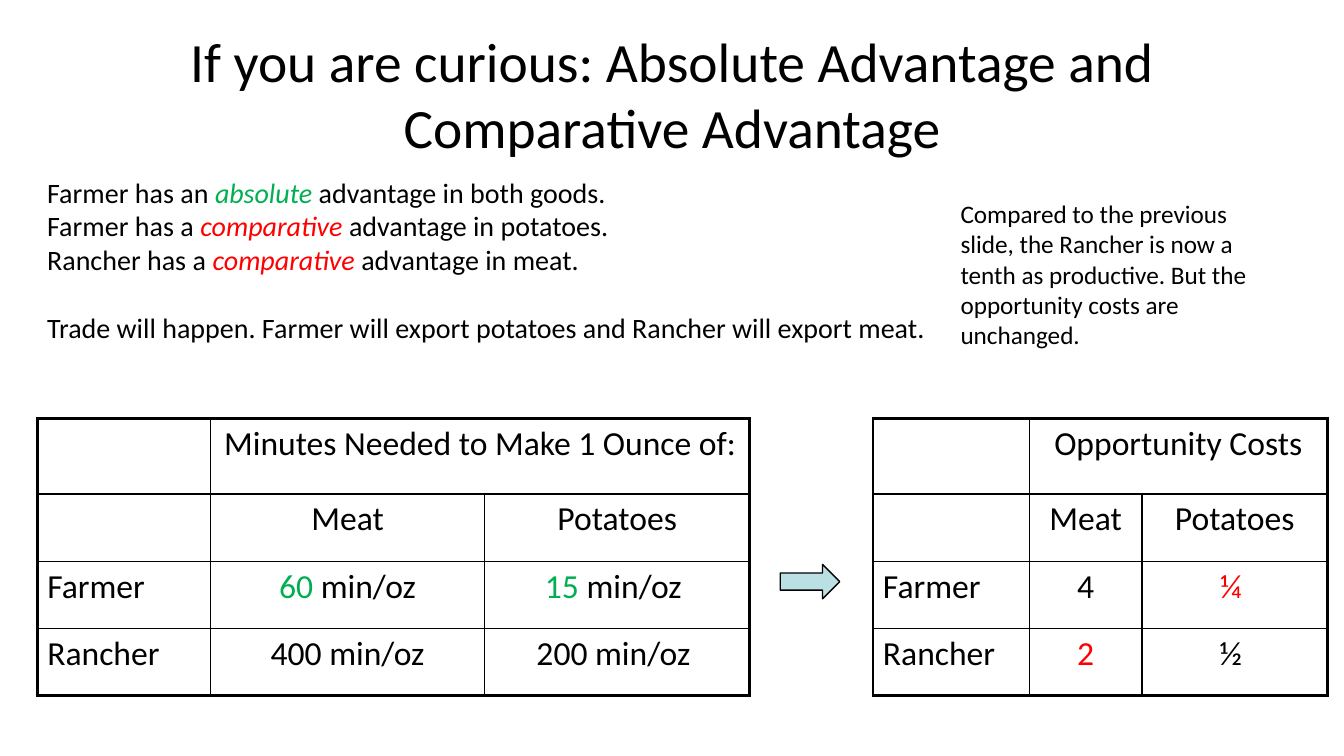
import pptx
import pptx.dml.color
import pptx.enum.shapes
import pptx.enum.text
import pptx.oxml
import pptx.oxml.ns
import pptx.util

Pt = pptx.util.Pt
RGB = pptx.dml.color.RGBColor
ALIGN = pptx.enum.text.PP_ALIGN
ANCHOR = pptx.enum.text.MSO_ANCHOR

COLORS = {"black": "000000", "green": "00B050", "red": "FF0000", "arrow": "BBE0E3"}
OUTER_BORDER, INNER_BORDER = 2.25, 1


def write(paragraph, runs, size, align=ALIGN.LEFT):
    """Fill a paragraph with (text, colour name, italic) runs."""
    paragraph.alignment = align
    for text, color, italic in runs:
        run = paragraph.add_run()
        run.text = text
        formats = {"name": "Calibri", "size": Pt(size), "italic": italic}
        for attribute, value in formats.items():
            setattr(run.font, attribute, value)
        run.font.color.rgb = RGB.from_string(COLORS[color])


def set_borders(cell, widths):
    """Draw black borders; widths are left, right, top, bottom in points."""
    properties = cell._tc.get_or_add_tcPr()
    for position, (side, width) in enumerate(zip("LRTB", widths)):
        properties.insert(position, pptx.oxml.parse_xml(
            f'<a:ln{side} {pptx.oxml.ns.nsdecls("a")} w="{Pt(width)}"><a:solidFill>'
            f'<a:srgbClr val="{COLORS["black"]}"/></a:solidFill></a:ln{side}>'))


presentation = pptx.Presentation()
presentation.slide_width, presentation.slide_height = Pt(960), Pt(540)
slide = presentation.slides.add_slide(presentation.slide_layouts[6])

# Title, advantages and remark
title = [[("If you are curious: Absolute Advantage and Comparative Advantage", "black", False)]]
advantages = [
    [(f"{who} ", "black", False), (kind, color, True), (f" advantage in {goods}.", "black", False)]
    for who, kind, color, goods in [
        ("Farmer has an", "absolute", "green", "both goods"),
        ("Farmer has a", "comparative", "red", "potatoes"),
        ("Rancher has a", "comparative", "red", "meat"),
    ]
]
advantages.append([("Trade will happen. Farmer will export potatoes and Rancher will export meat.",
                    "black", False)])
remark = [[("Compared to the previous slide, the Rancher is now a tenth as productive. "
            "But the opportunity costs are unchanged.", "black", False)]]

for box, lines, size, align, anchor in [
    ((48, 21.6, 864, 90), title, 39.6, ALIGN.CENTER, ANCHOR.MIDDLE),
    ((26.6, 121.7, 707, 128), advantages, 20, ALIGN.LEFT, ANCHOR.TOP),
    ((679, 138.2, 243.4, 116.6), remark, 18, ALIGN.LEFT, ANCHOR.TOP),
]:
    frame = slide.shapes.add_textbox(*map(Pt, box)).text_frame
    frame.word_wrap = True
    frame.vertical_anchor = anchor
    for index, runs in enumerate(lines):
        paragraph = frame.add_paragraph() if index else frame.paragraphs[0]
        write(paragraph, runs, size, align)
    if lines is advantages:
        paragraph.space_before = Pt(24.4)

# Tables: each value is a highlighted part, its colour and the rest
opportunity_costs = [
    ("Farmer", ("4", "black", ""), ("¼", "red", " ")),
    ("Rancher", ("2", "red", ""), ("½", "black", " ")),
]
minutes_needed = [
    ("Farmer", ("60", "green", " min/oz"), ("15", "green", " min/oz ")),
    ("Rancher", ("400", "black", " min/oz"), ("200", "black", " min/oz ")),
]
row_heights = [54, 48, 48, 48]

for left, column_widths, heading, producers in [
    (623.5, [111.6, 80.6, 132.5], "Opportunity Costs", opportunity_costs),
    (26.6, [123.8, 195.8, 189.4], "Minutes Needed to Make 1 Ounce of:", minutes_needed),
]:
    table = slide.shapes.add_table(4, 3, Pt(left), Pt(298.8), Pt(sum(column_widths)),
                                   Pt(sum(row_heights))).table
    table.first_row = table.horz_banding = False
    for column, width in zip(table.columns, column_widths):
        column.width = Pt(width)
    for row, height in zip(table.rows, row_heights):
        row.height = Pt(height)
    table.cell(0, 1).merge(table.cell(0, 2))

    contents = {(0, 1): (heading, "black", ""), (1, 1): ("Meat", "black", ""),
                (1, 2): ("Potatoes", "black", "")}
    for row, (producer, meat, potatoes) in enumerate(producers, start=2):
        contents.update({(row, 0): (producer, "black", ""), (row, 1): meat, (row, 2): potatoes})
    for (row, column), (value, color, rest) in contents.items():
        runs = [(value, color, False)] + ([(rest, "black", False)] if rest else [])
        write(table.cell(row, column).text_frame.paragraphs[0], runs, 24,
              ALIGN.CENTER if column else ALIGN.LEFT)

    for row in range(4):
        for column in range(3):
            cell = table.cell(row, column)
            cell.fill.background()
            last_column = column + (cell.span_width if cell.is_merge_origin else 1) - 1
            on_edge = (column == 0, last_column == 2, row == 0, row == 3)
            set_borders(cell, [OUTER_BORDER if edge else INNER_BORDER for edge in on_edge])

# Arrow from minutes to opportunity costs
arrow = slide.shapes.add_shape(pptx.enum.shapes.MSO_SHAPE.RIGHT_ARROW,
                               Pt(557.3), Pt(403.2), Pt(42.5), Pt(24.5))
arrow.shadow.inherit = False
arrow.fill.solid()
arrow.fill.fore_color.rgb = RGB.from_string(COLORS["arrow"])
arrow.line.color.rgb = RGB.from_string(COLORS["black"])
arrow.line.width = Pt(1)

presentation.save("out.pptx")
